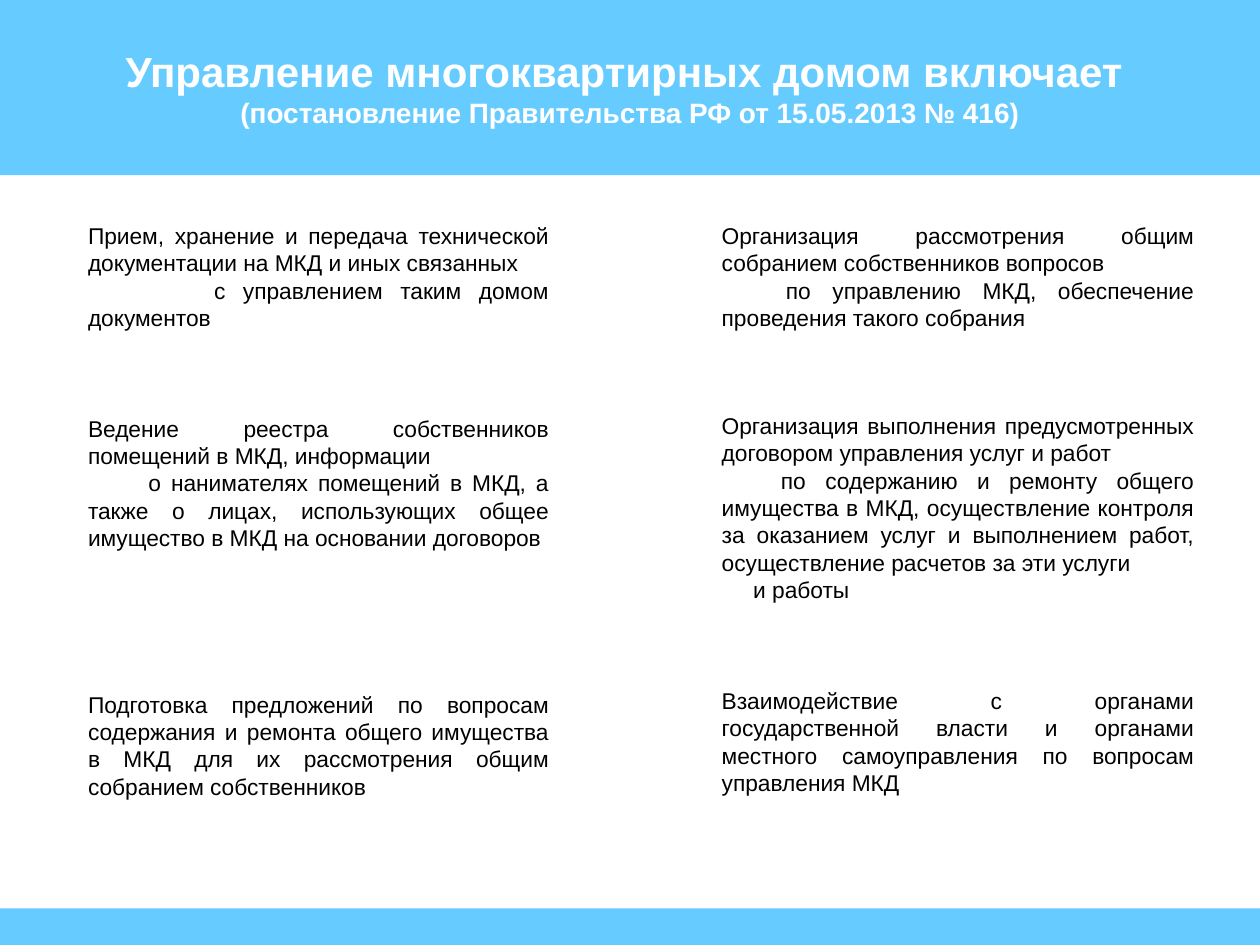
from pptx import Presentation
from pptx import util as u
from pptx.dml import color
from pptx.enum import shapes, text

WIDTH, HEIGHT = 10, 7.5
FONT = "Arial"
SKY, WHITE, BLACK = "66CCFF", "FFFFFF", "000000"

# Each duty: top within its column, height, paragraphs as (first-line indent, wording)
LEFT_DUTIES = [
    (0, 0.98, [
        (0, "Прием, хранение и передача технической документации на МКД и иных связанных"),
        (1, "с управлением таким домом документов")]),
    (1.53, 1.19, [
        (0, "Ведение реестра собственников помещений в МКД, информации"),
        (0.48, "о нанимателях помещений в МКД, а также о лицах, использующих "
               "общее имущество в МКД на основании договоров")]),
    (3.72, 0.98, [
        (0, "Подготовка предложений по вопросам содержания и ремонта общего имущества "
            "в МКД для их рассмотрения общим собранием собственников")]),
]
RIGHT_DUTIES = [
    (0, 0.98, [
        (0, "Организация рассмотрения общим собранием собственников вопросов"),
        (0.51, "по управлению МКД, обеспечение проведения такого собрания")]),
    (1.51, 1.63, [
        (0, "Организация выполнения предусмотренных договором управления услуг и работ"),
        (0.47, "по содержанию и ремонту общего имущества в МКД, осуществление контроля "
               "за оказанием услуг и выполнением работ, осуществление расчетов за эти услуги"),
        (0.25, "и работы")]),
    (3.69, 0.98, [
        (0, "Взаимодействие с органами государственной власти и органами местного "
            "самоуправления по вопросам управления МКД")]),
]


def rgb(value):
    return color.RGBColor.from_string(value)


def inches(box):
    return [u.Inches(length) for length in box]


def write(paragraph, wording, size=13, hue=BLACK, bold=False,
          align=text.PP_ALIGN.JUSTIFY, indent=0):
    paragraph.alignment = align
    if indent:
        properties = paragraph._p.get_or_add_pPr()
        properties.set("marL", "0")
        properties.set("indent", str(u.Inches(indent)))
    run = paragraph.add_run()
    run.text = wording
    run.font.name = FONT
    run.font.size = u.Pt(size)
    run.font.bold = bold
    run.font.color.rgb = rgb(hue)


def add_band(slide, box):
    band = slide.shapes.add_shape(shapes.MSO_SHAPE.RECTANGLE, *inches(box))
    band.shadow.inherit = False
    band.fill.solid()
    band.fill.fore_color.rgb = rgb(SKY)
    band.line.fill.background()
    return band


def add_header(slide, box):
    frame = add_band(slide, box).text_frame
    frame.word_wrap = True
    frame.vertical_anchor = text.MSO_ANCHOR.MIDDLE
    style = dict(hue=WHITE, bold=True, align=text.PP_ALIGN.CENTER)
    write(frame.paragraphs[0], "Управление многоквартирных домом включает ", size=24, **style)
    write(frame.add_paragraph(), "(постановление Правительства РФ от 15.05.2013 № 416)",
          size=16, **style)


def add_duties(slide, box, duties):
    """Place a column of duties, their tops measured from the top of the box."""
    left, top, width, _ = box
    for offset, height, paragraphs in duties:
        duty = slide.shapes.add_textbox(*inches((left, top + offset, width, height)))
        frame = duty.text_frame
        frame.word_wrap = True
        frame.auto_size = text.MSO_AUTO_SIZE.SHAPE_TO_FIT_TEXT
        for number, (indent, wording) in enumerate(paragraphs):
            paragraph = frame.add_paragraph() if number else frame.paragraphs[0]
            write(paragraph, wording, indent=indent)


def main():
    presentation = Presentation()
    presentation.slide_width, presentation.slide_height = inches((WIDTH, HEIGHT))
    slide = presentation.slides.add_slide(presentation.slide_layouts[6])

    header, footer, body_top = 1.39, 0.29, 1.71
    body = HEIGHT - footer - body_top
    add_header(slide, (0, 0, WIDTH, header))
    add_duties(slide, (0.6, body_top, 3.85, body), LEFT_DUTIES)
    add_duties(slide, (5.63, body_top, 3.94, body), RIGHT_DUTIES)
    add_band(slide, (0, HEIGHT - footer, WIDTH, footer))
    presentation.save("out.pptx")


if __name__ == "__main__":
    main()
